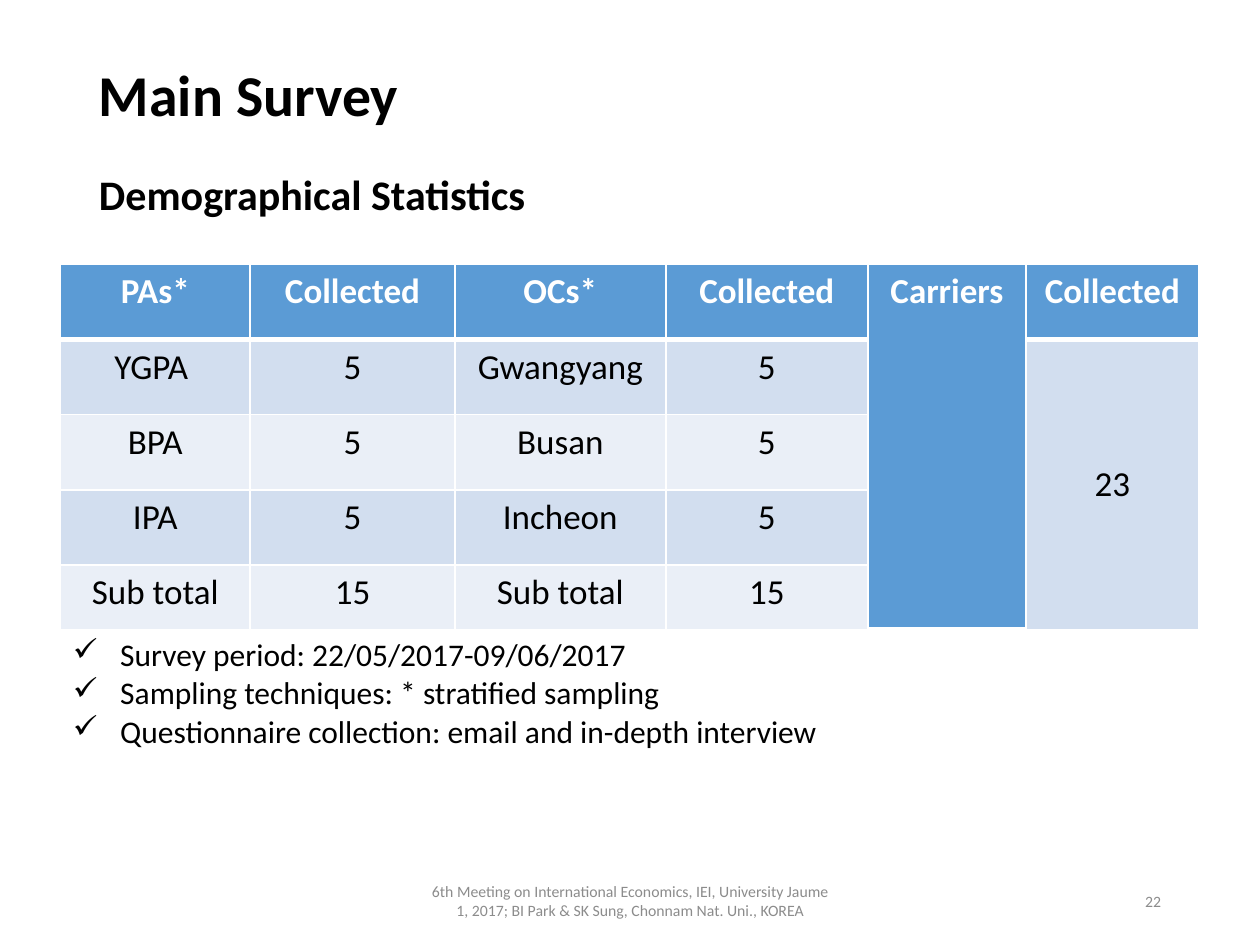
from lxml.etree import SubElement, fromstring
from pptx import Presentation
from pptx.dml.color import RGBColor
from pptx.enum.text import MSO_ANCHOR, PP_ALIGN
from pptx.oxml.ns import qn, nsdecls
from pptx.util import Pt

BLACK = RGBColor(0x00, 0x00, 0x00)
WHITE = RGBColor(0xFF, 0xFF, 0xFF)
GREY = RGBColor(0x8C, 0x8C, 0x8C)
BLUE = RGBColor(0x5B, 0x9B, 0xD5)
BANDS = [RGBColor(0xEA, 0xEF, 0xF7), RGBColor(0xD2, 0xDE, 0xEF)]
FONT = "Calibri"

LEFT, MID, RIGHT = PP_ALIGN.LEFT, PP_ALIGN.CENTER, PP_ALIGN.RIGHT
LABELS = [
    ("Main Survey", (49.5, 28.75, 621, 54), 33, BLACK, True, LEFT, 0.9),
    ("Demographical Statistics", (49.5, 90, 271, 44.5), 24, BLACK, True, LEFT, 0.9),
    ("6th Meeting on International Economics, IEI, University Jaume 1, 2017; "
     "BI Park & SK Sung, Chonnam Nat. Uni., KOREA",
     (238.5, 500.5, 243, 28.75), 9, GREY, False, MID, 1),
    ("22", (508.5, 500.5, 162, 28.75), 9, GREY, False, RIGHT, 1),
]
ROWS = [
    ["PAs*", "Collected", "OCs*", "Collected", "Carriers", "Collected"],
    ["YGPA ", "5", "Gwangyang", "5", "", "23"],
    ["BPA", "5", "Busan", "5", "", ""],
    ["IPA", "5", "Incheon", "5", "", ""],
    ["Sub total", "15", "Sub total", "15", "", ""],
    ["", "", "", "", "", ""],
]
NOTES = [
    "Survey period: 22/05/2017-09/06/2017",
    "Sampling techniques: * stratified sampling",
    "Questionnaire collection: email and in-depth interview",
]
SPANS = [((0, 4), (4, 4)), ((1, 5), (4, 5)), ((5, 0), (5, 5))]
WIDTHS = [108.5, 117, 120.5, 115.5, 90.5, 98.5]
HEIGHTS = [43, 43, 43, 43, 37, 96]
LAST = len(ROWS) - 1


def write(para, text, size, color, bold=False, align=LEFT):
    para.alignment = align
    run = para.add_run()
    run.text = text
    run.font.name = FONT
    run.font.size = Pt(size)
    run.font.bold = bold
    run.font.color.rgb = color


def label(slide, text, box, size, color, bold, align, space):
    frame = slide.shapes.add_textbox(*map(Pt, box)).text_frame
    frame.word_wrap = True
    frame.vertical_anchor = MSO_ANCHOR.MIDDLE
    para = frame.paragraphs[0]
    para.line_spacing = space
    write(para, text, size, color, bold, align)


def edge(cell, row):
    wide = {"lnT": 3 if row == 1 else 1, "lnB": 3 if row == 0 else 1}
    props = cell._tc.get_or_add_tcPr()
    for spot, side in enumerate(["lnL", "lnR", "lnT", "lnB"]):
        props.insert(spot, fromstring(
            f'<a:{side} {nsdecls("a")} w="{Pt(wide.get(side, 1))}"><a:solidFill>'
            f'<a:srgbClr val="{WHITE}"/></a:solidFill></a:{side}>'))


def check(para):
    props = para._p.get_or_add_pPr()
    props.set("marL", str(Pt(27)))
    props.set("indent", str(Pt(-27)))
    SubElement(props, qn("a:buChar")).set("char", "✓")


def grid(slide):
    frame = slide.shapes.add_table(
        len(ROWS), len(WIDTHS), Pt(34.5), Pt(151),
        Pt(sum(WIDTHS)), Pt(sum(HEIGHTS)))
    table = frame.table
    for col, width in zip(table.columns, WIDTHS):
        col.width = Pt(width)
    for line, height in zip(table.rows, HEIGHTS):
        line.height = Pt(height)
    for r, texts in enumerate(ROWS):
        for c, text in enumerate(texts):
            cell = table.cell(r, c)
            cell.fill.solid()
            cell.fill.fore_color.rgb = (
                BLUE if r == 0 else WHITE if r == LAST else BANDS[r % 2])
            edge(cell, r)
            if text:
                write(cell.text_frame.paragraphs[0], text, 20,
                      BLACK if r else WHITE, r == 0, MID)
    for start, end in SPANS:
        table.cell(*start).merge(table.cell(*end))
    table.cell(1, 5).vertical_anchor = MSO_ANCHOR.MIDDLE
    body = table.cell(LAST, 0).text_frame
    for i, note in enumerate(NOTES):
        para = body.add_paragraph() if i else body.paragraphs[0]
        write(para, note, 18, BLACK)
        check(para)


def main():
    deck = Presentation()
    deck.slide_width, deck.slide_height = Pt(720), Pt(540)
    slide = deck.slides.add_slide(deck.slide_layouts[6])
    grid(slide)
    for item in LABELS:
        label(slide, *item)
    deck.save("out.pptx")


if __name__ == "__main__":
    main()
